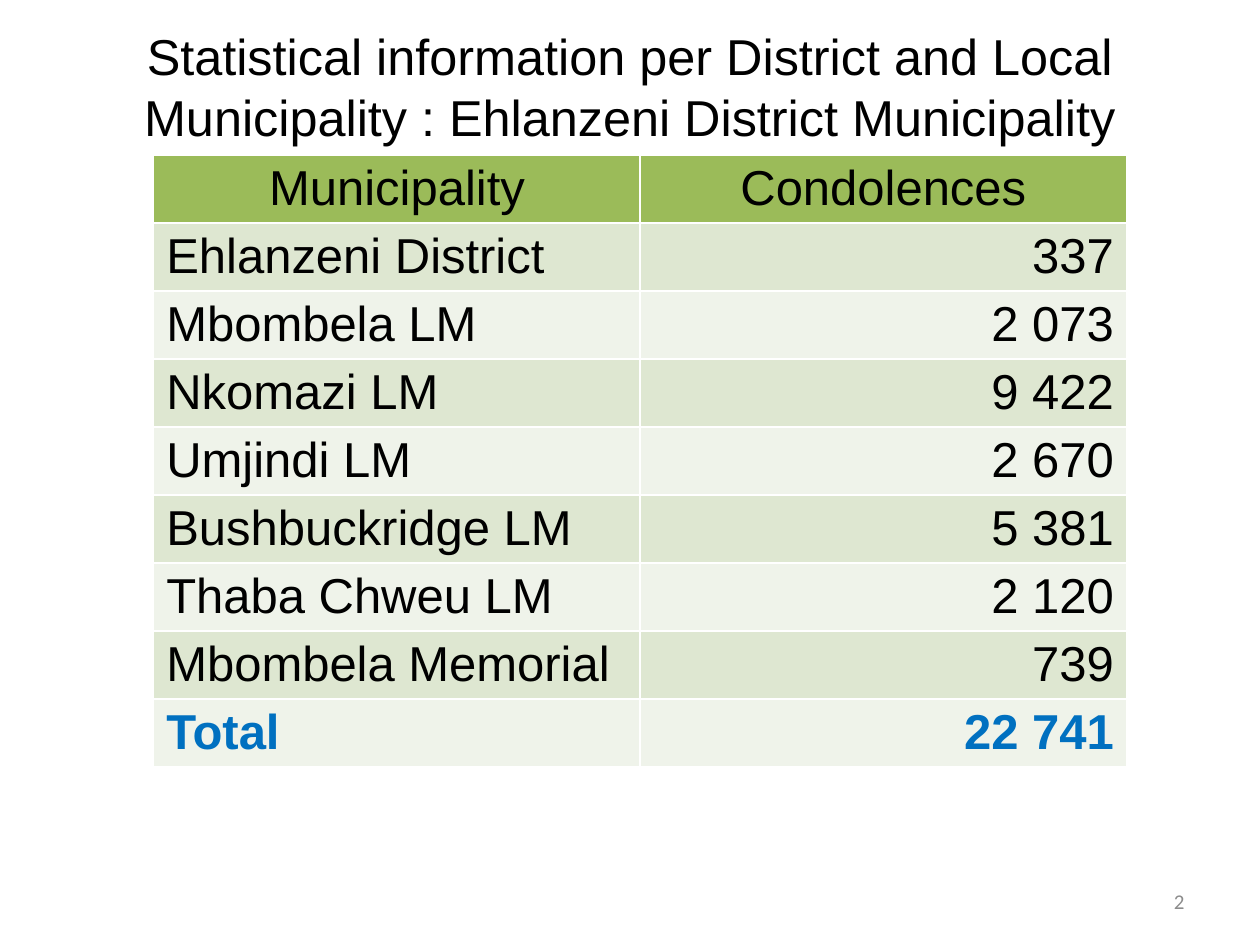
"""Build the slide of condolences per municipality in Ehlanzeni District."""
from pptx import Presentation
from pptx.dml.color import RGBColor
from pptx.enum.text import MSO_ANCHOR, PP_ALIGN
from pptx.util import Inches, Pt

LEFT, CENTER, RIGHT = PP_ALIGN.LEFT, PP_ALIGN.CENTER, PP_ALIGN.RIGHT
MIDDLE = MSO_ANCHOR.MIDDLE
BLACK = RGBColor(0x00, 0x00, 0x00)
BLUE = RGBColor(0x00, 0x70, 0xC0)
GRAY = RGBColor(0x8C, 0x8C, 0x8C)
GREEN = RGBColor(0x9B, 0xBB, 0x59)
BANDS = [RGBColor(0xEF, 0xF3, 0xEA), RGBColor(0xDE, 0xE7, 0xD1)]

ROWS = [
    ("Municipality", "Condolences"),
    ("Ehlanzeni District", "337"),
    ("Mbombela LM", "2 073"),
    ("Nkomazi LM", "9 422"),
    ("Umjindi LM", "2 670"),
    ("Bushbuckridge LM", "5 381"),
    ("Thaba Chweu LM", "2 120"),
    ("Mbombela Memorial", "739"),
    ("Total", "22 741"),
]


def write(frame, text, size, color, align, face="Arial", bold=False):
    frame.text = text
    para = frame.paragraphs[0]
    para.alignment = align
    font = para.runs[0].font
    font.name = face
    font.size = Pt(size)
    font.bold = bold
    font.color.rgb = color


deck = Presentation()
deck.slide_width, deck.slide_height = Inches(10), Inches(7.5)
slide = deck.slides.add_slide(deck.slide_layouts[5])

title = slide.shapes.title
title.left, title.top = Inches(0.5), Inches(0.21)
title.width, title.height = Inches(9), Inches(0.94)
title.text_frame.vertical_anchor = MIDDLE
write(title.text_frame,
      "Statistical information per District and Local Municipality : "
      "Ehlanzeni District Municipality", 28.8, BLACK, CENTER)

table = slide.shapes.add_table(
    len(ROWS), 2, Inches(1.22), Inches(1.23),
    Inches(7.72), Inches(0.54) * len(ROWS)).table
for r, row in enumerate(ROWS):
    head, total = r == 0, r == len(ROWS) - 1
    for c, text in enumerate(row):
        cell = table.cell(r, c)
        cell.fill.solid()
        cell.fill.fore_color.rgb = GREEN if head else BANDS[r % 2]
        align = CENTER if head else (LEFT, RIGHT)[c]
        write(cell.text_frame, text, 28, BLUE if total else BLACK, align,
              bold=total)

number = slide.shapes.add_textbox(
    Inches(7.17), Inches(6.95), Inches(2.33), Inches(0.4)).text_frame
number.word_wrap = True
number.vertical_anchor = MIDDLE
write(number, "2", 12, GRAY, RIGHT, face="Calibri")

deck.save("out.pptx")
